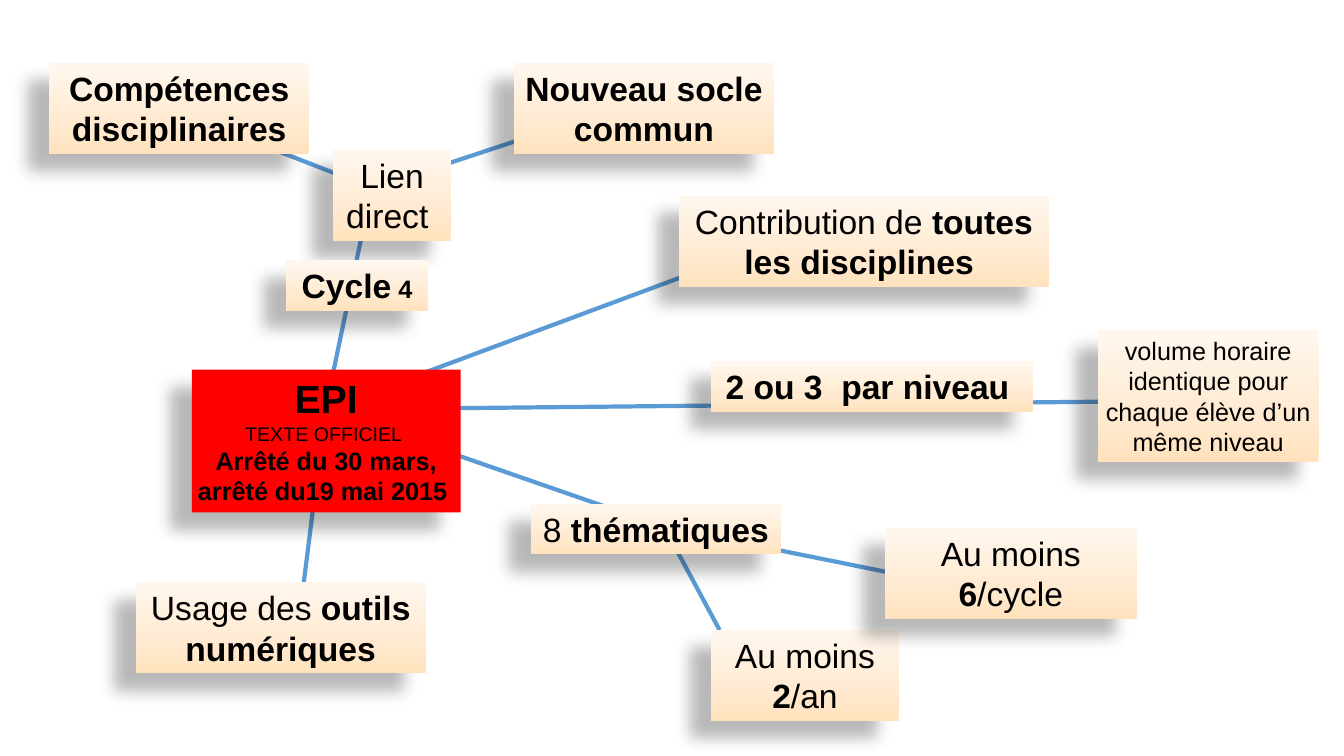
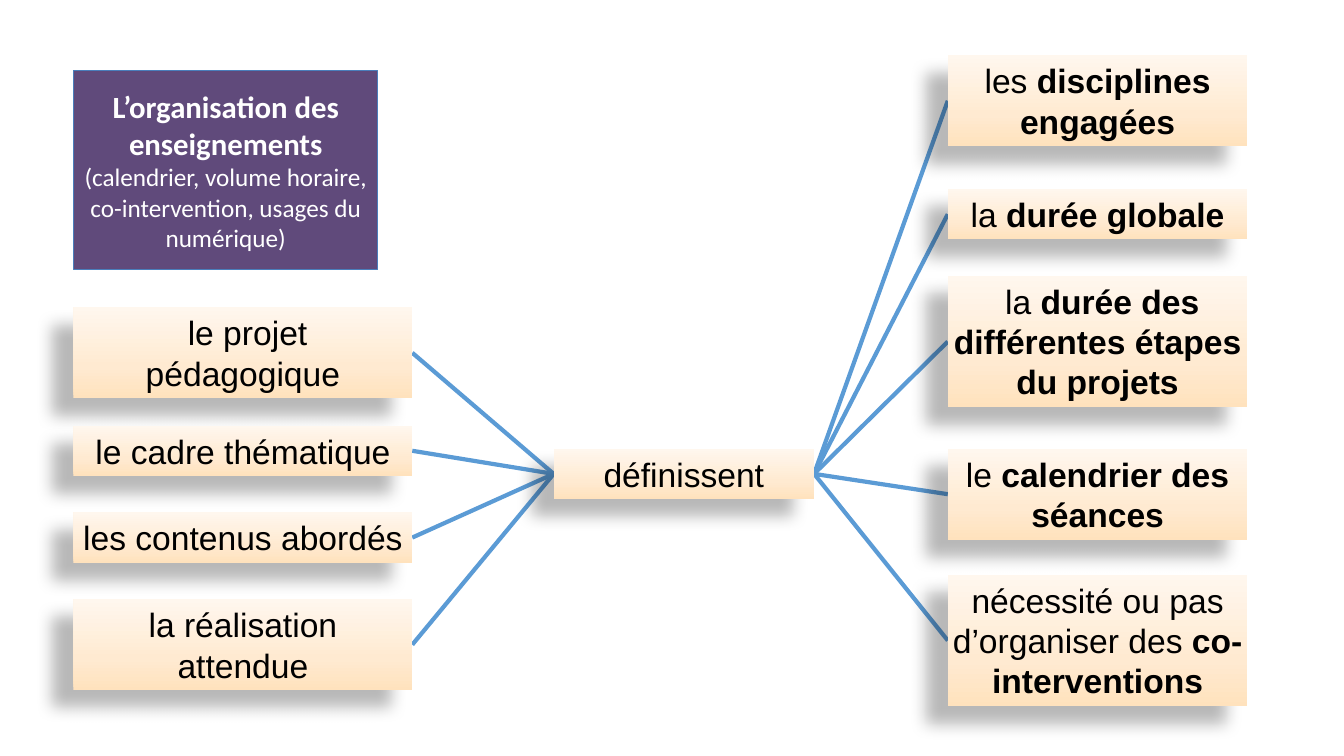
from pptx import Presentation
from pptx.dml.color import RGBColor
from pptx.enum.shapes import MSO_CONNECTOR, MSO_SHAPE
from pptx.enum.text import MSO_ANCHOR, MSO_AUTO_SIZE, PP_ALIGN
from pptx.oxml import parse_xml
from pptx.oxml.ns import nsdecls
from pptx.util import Pt

BLACK, WHITE, RED, PURPLE = "000000", "FFFFFF", "FF0000", "604A7B"
LINK, PURPLE_EDGE = "5B9BD5", "4A7EBB"
CREAM = ((0, "FFE2BD"), (35, "FFEAD1"), (100, "FFF7EE"))
LEFT_SITE, RIGHT_SITE = 1, 3


def colour(value):
    return RGBColor.from_string(value)


def add_effect(shape, content=""):
    shape._element.spPr.append(
        parse_xml(f"<a:effectLst {nsdecls('a')}>{content}</a:effectLst>")
    )


def cast_shadow(shape):
    add_effect(
        shape,
        f'<a:outerShdw blurRad="{Pt(11.8)}" dist="{Pt(19.7)}" dir="8460000" '
        f'algn="tl" rotWithShape="0"><a:srgbClr val="{BLACK}">'
        '<a:alpha val="28000"/></a:srgbClr></a:outerShdw>',
    )


def fill_cream(shape):
    stops = "".join(
        f'<a:gs pos="{position * 1000}"><a:srgbClr val="{value}"/></a:gs>'
        for position, value in CREAM
    )
    shape._element.spPr.append(
        parse_xml(
            f'<a:gradFill {nsdecls("a")} rotWithShape="1"><a:gsLst>{stops}</a:gsLst>'
            '<a:lin ang="16200000" scaled="0"/></a:gradFill>'
        )
    )


def mixed(text, size=24):
    return [
        (part, size, index % 2 == 1)
        for index, part in enumerate(text.split("*"))
        if part
    ]


def write(shape, paragraphs, font="Arial", ink=BLACK, anchor=MSO_ANCHOR.TOP):
    frame = shape.text_frame
    frame.word_wrap = True
    frame.auto_size = MSO_AUTO_SIZE.NONE
    frame.vertical_anchor = anchor
    frame.margin_left = frame.margin_right = Pt(3.6)
    frame.margin_top = frame.margin_bottom = Pt(3.6)
    for index, parts in enumerate(paragraphs):
        paragraph = frame.add_paragraph() if index else frame.paragraphs[0]
        paragraph.alignment = PP_ALIGN.CENTER
        for text, size, bold in parts:
            run = paragraph.add_run()
            run.text = text
            run.font.name = font
            run.font.size = Pt(size)
            run.font.bold = bold
            run.font.color.rgb = colour(ink)


def place_title(slide, box, fill):
    title = slide.shapes.title
    title.left, title.top, title.width, title.height = map(Pt, box)
    title.fill.solid()
    title.fill.fore_color.rgb = colour(fill)
    return title


def idea(slide, left, top, width, lines, parts):
    height = 7 + 29 * lines
    card = slide.shapes.add_shape(
        MSO_SHAPE.RECTANGLE, Pt(left), Pt(top), Pt(width), Pt(height)
    )
    fill_cream(card)
    cast_shadow(card)
    card.line.fill.background()
    write(card, [parts])
    return card


def link(slide, start=(0, 0), end=(0, 0)):
    branch = slide.shapes.add_connector(
        MSO_CONNECTOR.STRAIGHT, *map(Pt, (*start, *end))
    )
    branch.line.color.rgb = colour(LINK)
    branch.line.width = Pt(3)
    add_effect(branch)
    slide.shapes._spTree.insert(2, branch._element)
    return branch


def join(slide, source, target):
    branch = link(slide)
    branch.begin_connect(source, RIGHT_SITE)
    branch.end_connect(target, LEFT_SITE)


def column(slide, left, width, entries):
    return [
        idea(slide, left, top, width, lines, mixed(text))
        for top, lines, text in entries
    ]


def build_epi_map(slide):
    epi = place_title(slide, (137, 264, 192, 102), RED)
    epi.line.fill.background()
    cast_shadow(epi)
    write(
        epi,
        [
            mixed("*EPI*", 28),
            mixed("TEXTE OFFICIEL ", 14),
            mixed("*Arrêté du 30 mars, arrêté du19 mai 2015 *", 18),
        ],
    )
    ideas = (
        (35, 45, 186, 2, mixed("*Compétences disciplinaires*")),
        (367, 45, 186, 2, mixed("*Nouveau socle commun*")),
        (238, 107, 84, 2, mixed("Lien direct ")),
        (204, 186, 102, 1, mixed("*Cycle*") + mixed("* 4*", 18)),
        (485, 140, 264, 2, mixed("Contribution de *toutes les disciplines *")),
        (508, 258, 230, 1, mixed("*2 ou 3  par niveau *")),
        (379, 360, 179, 1, mixed("8 *thématiques*")),
        (508, 450, 134, 2, mixed("Au moins *2*/an")),
        (784, 236, 158, 3,
         mixed("volume horaire identique pour chaque élève d’un même niveau", 18)),
        (97, 416, 207, 2, mixed("Usage des *outils numériques*")),
        (632, 377, 180, 2, mixed("Au moins *6*/cycle")),
    )
    for entry in ideas:
        idea(slide, *entry)

    hub, direct_link, themes = (232.5, 292.5), (266.5, 134.5), (474.5, 376.5)
    branches = {
        hub: ((519, 186), (829, 286.5), themes, (215.5, 428), (266.5, 129.5)),
        direct_link: ((401, 90), (182, 101.5)),
        themes: ((514, 450), (643, 410.5)),
    }
    for start, ends in branches.items():
        for end in ends:
            link(slide, start, end)


def build_organisation(slide):
    organisation = place_title(slide, (52.5, 50.5, 217.5, 142), PURPLE)
    organisation.line.color.rgb = colour(PURPLE_EDGE)
    organisation.line.width = Pt(0.75)
    heading = mixed("*L’organisation des enseignements *", 22)
    details = mixed(
        "(calendrier, volume horaire, co-intervention, usages du numérique)", 18
    )
    write(organisation, [heading + details], "Calibri", WHITE, MSO_ANCHOR.MIDDLE)

    inputs = column(slide, 52.5, 242, (
        (219.5, 2, " le projet pédagogique"),
        (304, 1, "le cadre thématique"),
        (366, 1, "les contenus abordés"),
        (428, 2, "la réalisation attendue"),
    ))
    define = idea(slide, 395.5, 320.5, 186, 1, mixed("définissent"))
    outcomes = column(slide, 677, 214, (
        (39.5, 2, "les *disciplines engagées*"),
        (135, 1, "la *durée globale*"),
        (197, 3, " la *durée des différentes étapes du projets*"),
        (320.5, 2, "le *calendrier des séances*"),
        (410.5, 3, "nécessité ou pas d’organiser des *co-interventions*"),
    ))
    for source in inputs:
        join(slide, source, define)
    for outcome in outcomes:
        join(slide, define, outcome)


def main():
    deck = Presentation()
    deck.slide_width, deck.slide_height = Pt(960), Pt(540)
    for build in (build_epi_map, build_organisation):
        build(deck.slides.add_slide(deck.slide_layouts[5]))
    deck.save("out.pptx")


if __name__ == "__main__":
    main()
